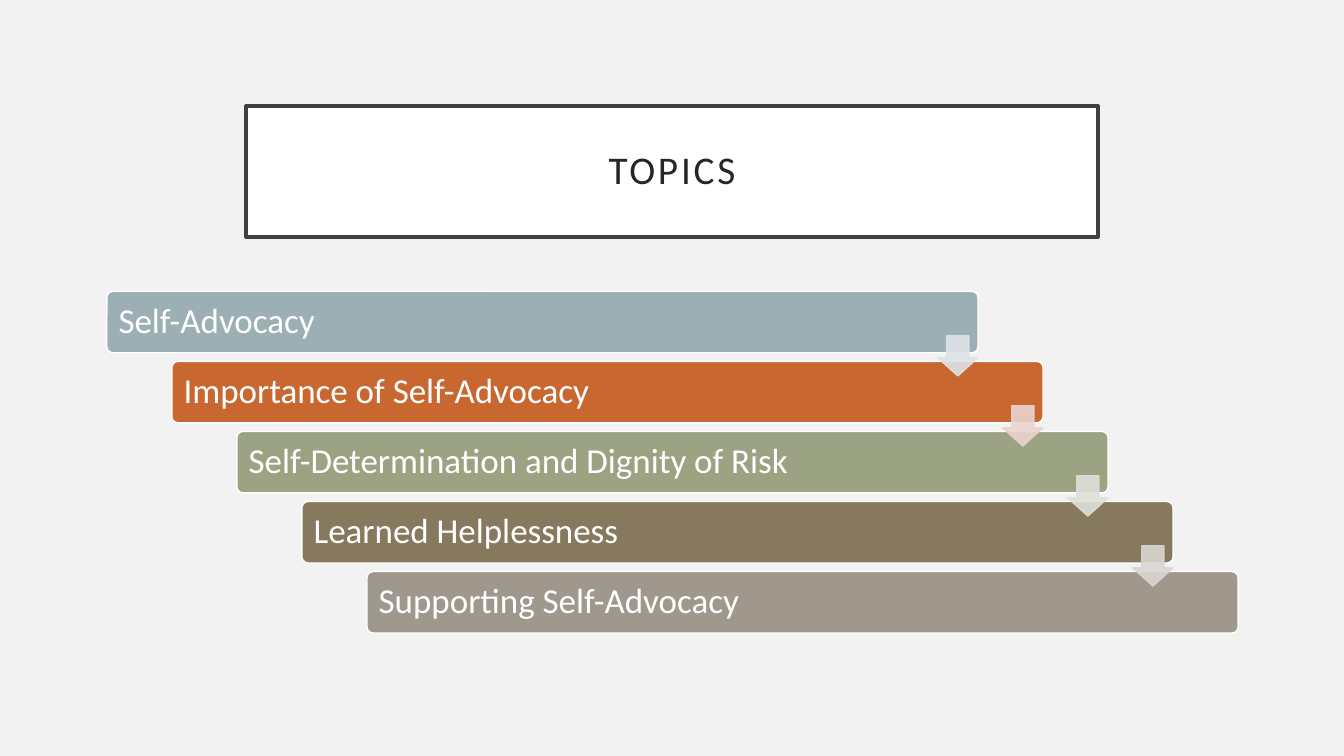
"""Build the topics slide with a staircase of five bars."""
from lxml import etree
from pptx import Presentation
from pptx.dml.color import RGBColor
from pptx.enum.shapes import MSO_SHAPE
from pptx.enum.text import MSO_ANCHOR, PP_ALIGN
from pptx.oxml.ns import qn
from pptx.util import Inches, Pt

RECT = MSO_SHAPE.RECTANGLE
ROUND = MSO_SHAPE.ROUNDED_RECTANGLE
DOWN = MSO_SHAPE.DOWN_ARROW
MIDDLE = MSO_ANCHOR.MIDDLE
LEFT = PP_ALIGN.LEFT
CENTER = PP_ALIGN.CENTER

STEP_X, STEP_Y = 2.58 / 4, 2.78 / 4
BARS = [
    ("Self-Advocacy", "9BAFB5"),
    ("Importance of Self-Advocacy", "C96731"),
    ("Self-Determination and Dignity of Risk", "9CA383"),
    ("Learned Helplessness", "87795D"),
    ("Supporting Self-Advocacy", "A0988C"),
]
ARROWS = ["DEE3E5", "EBD3CE", "DEE0D9", "D9D7D2"]


def paint(color, value):
    """Set a colour from a hex string."""
    color.rgb = RGBColor.from_string(value)


def assign(target, values):
    """Set each attribute named in a dict."""
    for name, value in values.items():
        setattr(target, name, value)


def add_box(shapes, kind, place, fill, line, width, adjust=()):
    """Add a filled and outlined preset shape."""
    box = shapes.add_shape(kind, *map(Inches, place))
    box.shadow.inherit = False
    box.fill.solid()
    paint(box.fill.fore_color, fill)
    paint(box.line.color, line)
    box.line.width = Pt(width)
    for index, value in enumerate(adjust):
        box.adjustments[index] = value
    return box


def add_text(box, text, size, color, align, inset):
    """Write one line of text in a shape and return its run."""
    frame = box.text_frame
    pad = Inches(inset)
    assign(frame, {
        "word_wrap": True, "vertical_anchor": MIDDLE,
        "margin_left": pad, "margin_right": pad,
        "margin_top": pad, "margin_bottom": pad,
    })
    para = frame.paragraphs[0]
    assign(para, {"alignment": align, "line_spacing": 0.9})
    run = para.add_run()
    run.text = text
    assign(run.font, {"name": "Calibri", "size": Pt(size)})
    paint(run.font.color, color)
    return run


def add_title(shapes):
    """Add the framed title with wide letter spacing."""
    box = add_box(shapes, RECT, (2.44, 1.05, 8.45, 1.3),
                  "FFFFFF", "404040", 2.5)
    run = add_text(box, "TOPICS", 28, "262626", CENTER, 0.2)
    run.font._element.set("spc", "200")


def add_bar(shapes, index, text, fill):
    """Add one labelled step of the staircase."""
    place = (1.06 + index * STEP_X, 2.89 + index * STEP_Y, 8.64, 0.61)
    box = add_box(shapes, ROUND, place, fill, "FFFFFF", 1, [0.1])
    add_text(box, text, 25, "FFFFFF", LEFT, 0.1)


def add_arrow(shapes, index, fill):
    """Add a translucent arrow leading to the next step."""
    place = (9.3 + index * STEP_X, 3.33 + index * STEP_Y, 0.4, 0.4)
    arrow = add_box(shapes, DOWN, place, fill, fill, 1, [0.55, 0.45])
    for color in arrow._element.spPr.iter(qn("a:srgbClr")):
        etree.SubElement(color, qn("a:alpha")).set("val", "90000")


def main():
    """Build and save the slide."""
    deck = Presentation()
    assign(deck, {"slide_width": Inches(13.33), "slide_height": Inches(7.5)})
    slide = deck.slides.add_slide(deck.slide_layouts[6])
    slide.background.fill.solid()
    paint(slide.background.fill.fore_color, "F2F2F2")
    add_title(slide.shapes)
    stairs = slide.shapes.add_group_shape().shapes
    for index, (text, fill) in enumerate(BARS):
        add_bar(stairs, index, text, fill)
    for index, fill in enumerate(ARROWS):
        add_arrow(stairs, index, fill)
    deck.save("out.pptx")


if __name__ == "__main__":
    main()
